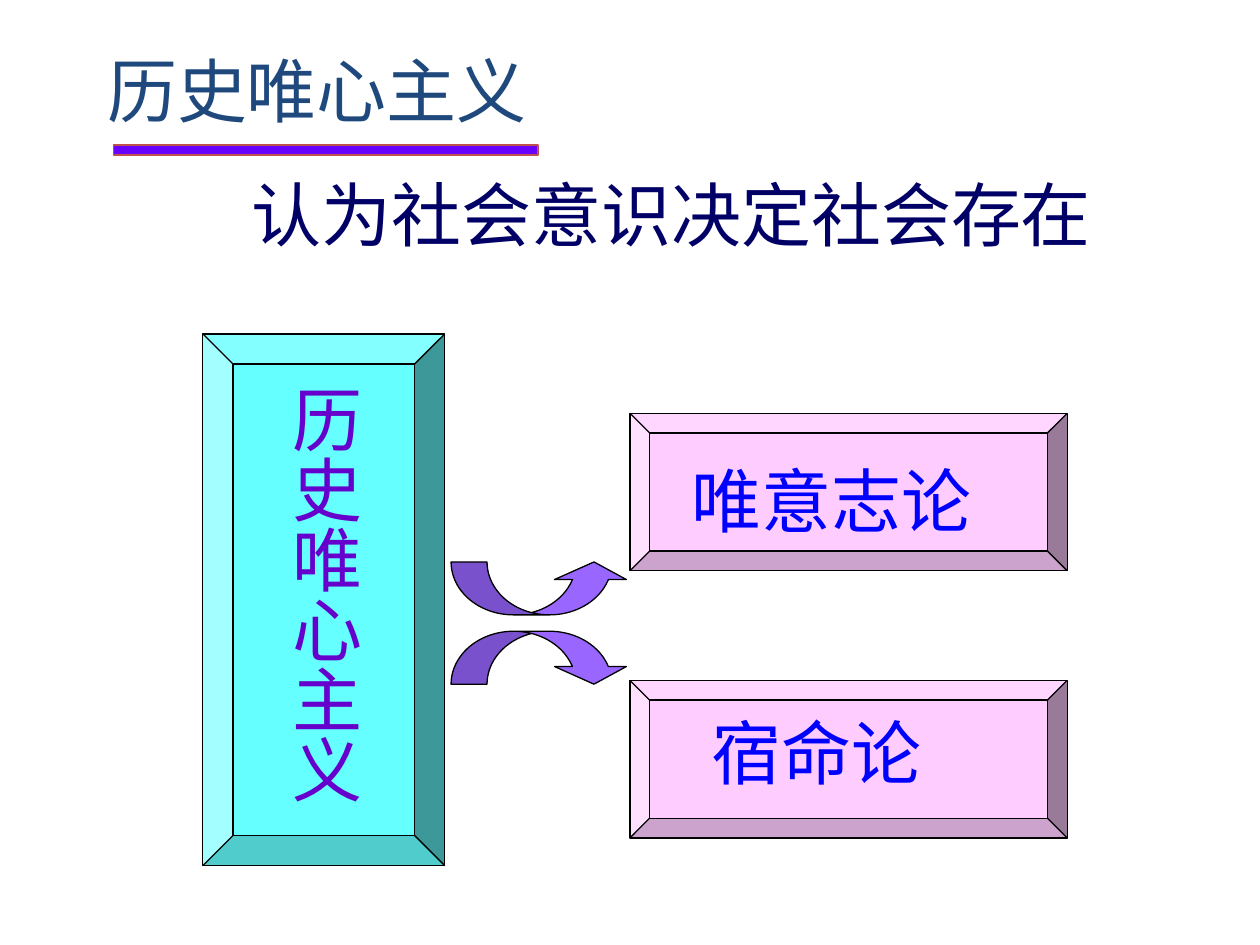
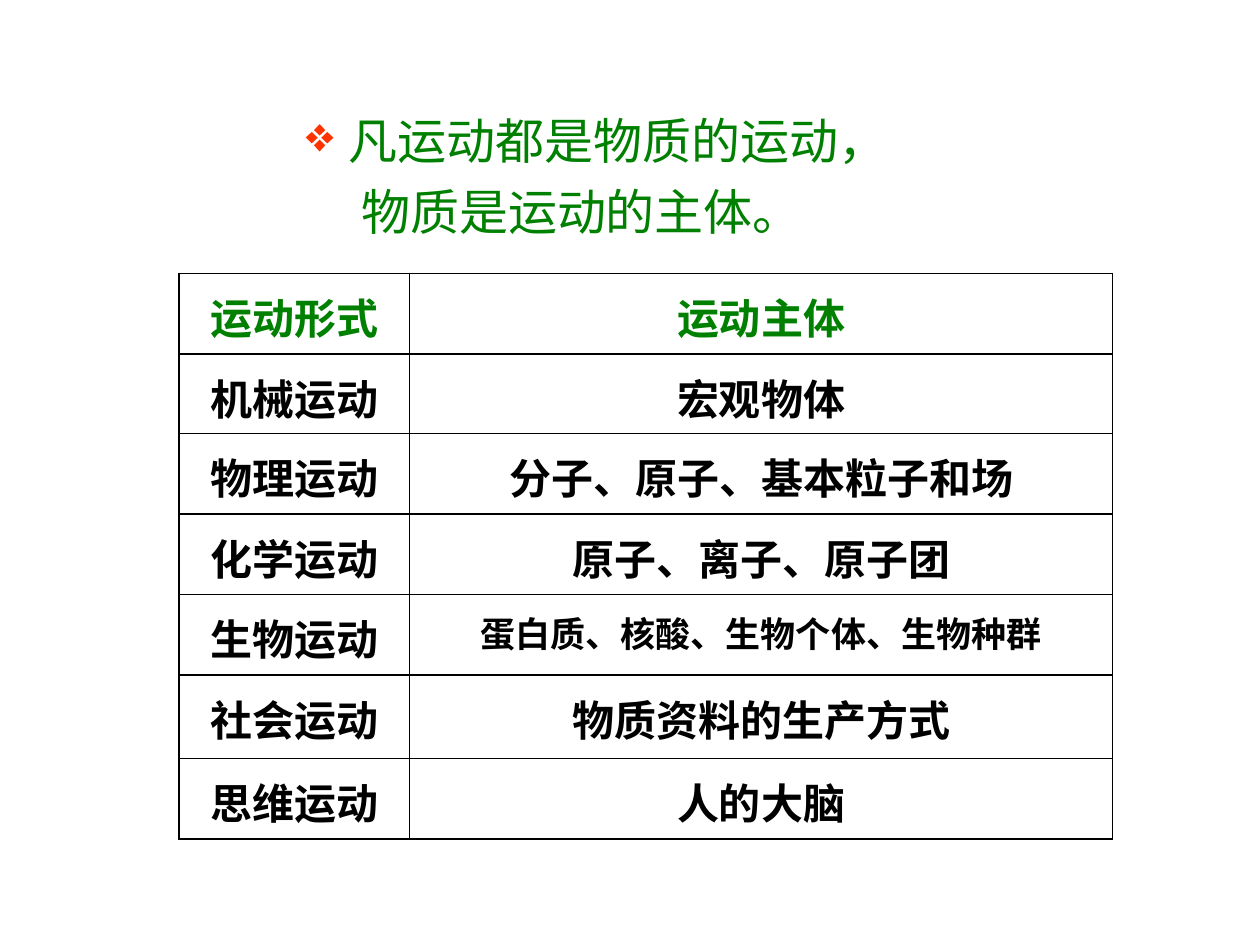
"""Builds two slides on historical idealism and the forms of motion."""
from lxml import etree
from pptx import Presentation
from pptx import util as u
from pptx.dml.color import RGBColor
from pptx.enum import shapes, text
from pptx.oxml import ns

BLACK = RGBColor(0x00, 0x00, 0x00)
WHITE = RGBColor(0xFF, 0xFF, 0xFF)
TITLE_BLUE = RGBColor(0x1F, 0x49, 0x7D)
NAVY = RGBColor(0x00, 0x00, 0x66)
BLUE = RGBColor(0x00, 0x00, 0xFF)
PURPLE = RGBColor(0x66, 0x00, 0xCC)
VIOLET = RGBColor(0x66, 0x00, 0xFF)
LILAC = RGBColor(0x99, 0x66, 0xFF)
BRICK = RGBColor(0xC0, 0x50, 0x4D)
CYAN = RGBColor(0x66, 0xFF, 0xFF)
PINK = RGBColor(0xFF, 0xCC, 0xFF)
GREEN = RGBColor(0x00, 0x80, 0x00)
ORANGE = RGBColor(0xFF, 0x33, 0x00)

CJK_FONT = "Noto Sans CJK SC"
ARROW_BEND = (0.68, 1.36, 0.333)

MOTION_ROWS = [
    ("运动形式", "运动主体"),
    ("机械运动", "宏观物体"),
    ("物理运动", "分子、原子、基本粒子和场"),
    ("化学运动", "原子、离子、原子团"),
    ("生物运动", "蛋白质、核酸、生物个体、生物种群"),
    ("社会运动", "物质资料的生产方式"),
    ("思维运动", "人的大脑"),
]
ROW_HEIGHTS = (0.64, 0.63, 0.64, 0.64, 0.64, 0.66, 0.64)


def write(paragraph, words, size=40, font="Calibri", color=BLACK, bold=False,
          align=text.PP_ALIGN.LEFT, before=0, indent=0, bullet=None):
    paragraph.alignment = align
    paragraph.space_before = u.Pt(before)
    properties = paragraph._p.get_or_add_pPr()
    if indent:
        properties.set("marL", str(u.Inches(indent)))
    if bullet:
        properties.set("indent", str(-u.Inches(indent)))
        bullet_color = etree.SubElement(properties, ns.qn("a:buClr"))
        etree.SubElement(bullet_color, ns.qn("a:srgbClr"), val=str(ORANGE))
        etree.SubElement(properties, ns.qn("a:buChar"), char=bullet)
    run = paragraph.add_run()
    run.text = words
    run.font.size = u.Pt(size)
    run.font.name = font
    run.font.bold = bold
    run.font.color.rgb = color
    etree.SubElement(run._r.get_or_add_rPr(), ns.qn("a:ea"), typeface=CJK_FONT)


class Deck:
    """Holds the presentation, its shared style and the current slide."""

    def __init__(self):
        self.presentation = Presentation()
        self.presentation.slide_width = u.Inches(10)
        self.presentation.slide_height = u.Inches(7.5)
        self.slide = None

    def add_slide(self, layout_name):
        layout = self.presentation.slide_layouts.get_by_name(layout_name)
        self.slide = self.presentation.slides.add_slide(layout)

    def title(self, words, left, top, width, height):
        title = self.slide.shapes.title
        title.left, title.top = u.Inches(left), u.Inches(top)
        title.width, title.height = u.Inches(width), u.Inches(height)
        frame = title.text_frame
        frame.auto_size = text.MSO_AUTO_SIZE.NONE
        frame.vertical_anchor = text.MSO_ANCHOR.TOP
        write(frame.paragraphs[0], words, color=TITLE_BLUE)

    def textbox(self, left, top, width, height, vertical=False):
        box = self.slide.shapes.add_textbox(*map(u.Inches, (left, top, width, height)))
        frame = box.text_frame
        frame.word_wrap = True
        if vertical:
            frame._txBody.bodyPr.set("vert", "eaVert")
        return frame

    def label(self, words, place, color, indent=0, vertical=False):
        frame = self.textbox(*place, vertical=vertical)
        write(frame.paragraphs[0], words, color=color, indent=indent)

    def shape(self, kind, left, top, width, height, fill, line=BLACK, adjustments=()):
        shape = self.slide.shapes.add_shape(kind, *map(u.Inches, (left, top, width, height)))
        shape.shadow.inherit = False
        shape.fill.solid()
        shape.fill.fore_color.rgb = fill
        shape.line.color.rgb = line
        shape.line.width = u.Pt(0.75)
        for index, value in enumerate(adjustments):
            shape.adjustments[index] = value

    def cell(self, cell, words, size, color):
        cell.fill.solid()
        cell.fill.fore_color.rgb = WHITE
        cell.margin_top, cell.margin_bottom = u.Inches(0.1), u.Inches(0.03)
        write(cell.text_frame.paragraphs[0], words, size=size, font="Arial",
              color=color, bold=True, align=text.PP_ALIGN.CENTER)
        properties = cell._tc.get_or_add_tcPr()
        for index, side in enumerate(("a:lnL", "a:lnR", "a:lnT", "a:lnB")):
            border = etree.Element(ns.qn(side), w=str(u.Pt(1)))
            fill = etree.SubElement(border, ns.qn("a:solidFill"))
            etree.SubElement(fill, ns.qn("a:srgbClr"), val=str(BLACK))
            properties.insert(index, border)

    def table(self, rows, left, top, widths, heights):
        table = self.slide.shapes.add_table(
            len(rows), len(widths), u.Inches(left), u.Inches(top),
            u.Inches(sum(widths)), u.Inches(sum(heights))).table
        table.first_row = table.horz_banding = False
        for column, width in zip(table.columns, widths):
            column.width = u.Inches(width)
        for row_index, (row, height) in enumerate(zip(rows, heights)):
            table.rows[row_index].height = u.Inches(height)
            for column_index, words in enumerate(row):
                self.cell(table.cell(row_index, column_index), words,
                          size=20 if len(words) > 14 else 24,
                          color=BLACK if row_index else GREEN)


def build_idealism(deck):
    kinds = shapes.MSO_SHAPE
    deck.add_slide("Title Only")
    deck.shape(kinds.RECTANGLE, 0.9, 1.15, 3.37, 0.08, VIOLET, line=BRICK)
    deck.title("历史唯心主义", 0.75, 0.33, 3.7, 0.77)
    deck.label("认为社会意识决定社会存在", (0.9, 1.31, 8.35, 0.77), NAVY, indent=1)
    deck.shape(kinds.BEVEL, 1.61, 2.65, 1.92, 4.22, CYAN)
    for top in (3.28, 5.4):
        deck.shape(kinds.BEVEL, 5, top, 3.47, 1.25, PINK)
    for kind, top in ((kinds.CURVED_DOWN_ARROW, 5.01), (kinds.CURVED_UP_ARROW, 4.46)):
        deck.shape(kind, 3.58, top, 1.42, 0.42, LILAC, adjustments=ARROW_BEND)
    deck.label("历史唯心主义", (2.09, 2.96, 0.87, 3.53), PURPLE, vertical=True)
    deck.label("唯意志论", (5.39, 3.58, 3.19, 0.77), BLUE)
    deck.label("宿命论", (5.55, 5.58, 3.11, 0.77), BLUE)


def build_motion(deck):
    deck.add_slide("Blank")
    frame = deck.textbox(2.33, 0.83, 5.5, 1.27)
    style = {"size": 28, "font": CJK_FONT, "color": GREEN}
    write(frame.paragraphs[0], "凡运动都是物质的运动，", indent=0.34, bullet="❖", **style)
    write(frame.add_paragraph(), "物质是运动的主体。", indent=0.44, before=7, **style)
    deck.table(MOTION_ROWS, 1.42, 2.17, (1.83, 5.58), ROW_HEIGHTS)


def main():
    deck = Deck()
    build_idealism(deck)
    build_motion(deck)
    deck.presentation.save("out.pptx")


if __name__ == "__main__":
    main()
